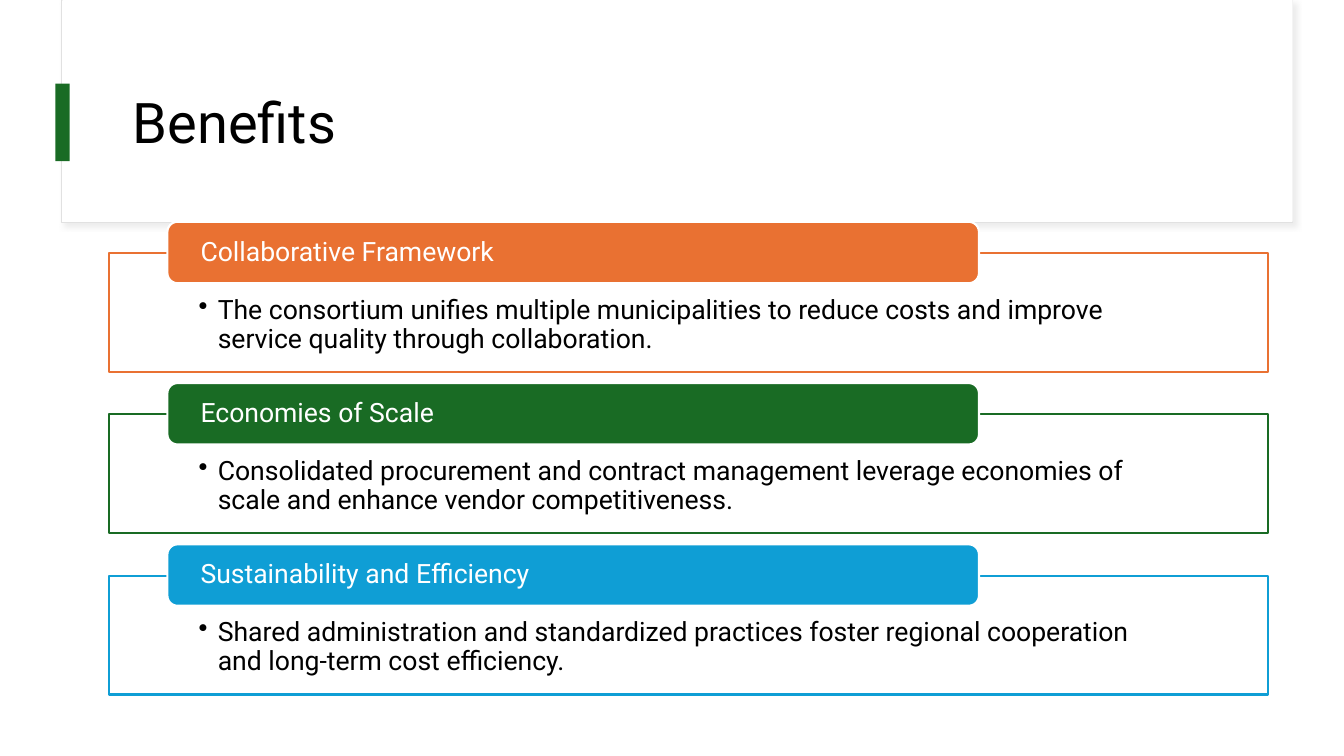
import pptx
import pptx.util
import pptx.dml.color
import pptx.enum.shapes
import pptx.enum.text
import pptx.oxml
import pptx.oxml.ns

Inches, Pt = pptx.util.Inches, pptx.util.Pt
SHAPE = pptx.enum.shapes.MSO_SHAPE
ANCHOR = pptx.enum.text.MSO_ANCHOR
ALIGN = pptx.enum.text.PP_ALIGN

# Content
TITLE = "Benefits"
BENEFITS = [
    ("Collaborative Framework", "orange",
     "The consortium unifies multiple municipalities to reduce costs "
     "and improve service quality through collaboration."),
    ("Economies of Scale", "green",
     "Consolidated procurement and contract management leverage "
     "economies of scale and enhance vendor competitiveness."),
    ("Sustainability and Efficiency", "blue",
     "Shared administration and standardized practices foster regional "
     "cooperation and long-term cost efficiency."),
]
COLORS = {"white": "FFFFFF", "black": "000000", "border": "E1E1E1",
          "shadow": "D9D9D9", "orange": "E97132", "green": "196B24",
          "blue": "0F9ED5"}
FONT = "Roboto"

# Layout
TOP, PITCH = 2.2, 1.6
BODY_DROP = 0.31  # body frame starts halfway down its heading


def rgb(name):
    return pptx.dml.color.RGBColor.from_string(COLORS[name])


def xml(text):
    ns = pptx.oxml.ns.nsdecls("a")
    return pptx.oxml.parse_xml(text.replace("NS", ns, 1))


def add_box(slide, kind, box, fill, line=None, width=1.5):
    sp = slide.shapes.add_shape(kind, *map(Inches, box))
    sp.shadow.inherit = False
    sp.fill.solid()
    sp.fill.fore_color.rgb = rgb(fill)
    if line:
        sp.line.color.rgb = rgb(line)
        sp.line.width = Pt(width)
    else:
        sp.line.fill.background()
    return sp


def set_text(sp, text, size, color, insets, anchor, bullet=False):
    tf = sp.text_frame
    left, top, right, bottom = map(Inches, insets)
    frame = {"word_wrap": True, "vertical_anchor": anchor,
             "margin_left": left, "margin_top": top,
             "margin_right": right, "margin_bottom": bottom}
    for name, value in frame.items():
        setattr(tf, name, value)
    p = tf.paragraphs[0]
    p.alignment = ALIGN.LEFT
    p.line_spacing = 0.9
    if bullet:
        pPr = p._p.get_or_add_pPr()
        indent = Inches(0.19)
        pPr.set("marL", str(indent))
        pPr.set("indent", str(-indent))
        pPr.append(xml('<a:buChar NS char="•"/>'))
    r = p.add_run()
    r.text = text
    for name, value in {"name": FONT, "size": Pt(size)}.items():
        setattr(r.font, name, value)
    r.font.color.rgb = rgb(color)


prs = pptx.Presentation()
prs.slide_width, prs.slide_height = Inches(13.33), Inches(7.5)
slide = prs.slides.add_slide(prs.slide_layouts[6])

# Title panel with soft shadow
panel = add_box(slide, SHAPE.RECTANGLE, (0.61, 0, 12.21, 2.21),
                "white", "border", 0.75)
effects = panel._element.spPr.find(pptx.oxml.ns.qn("a:effectLst"))
effects.append(xml(
    f'<a:outerShdw NS blurRad="{Pt(4)}" dist="{Pt(3)}" dir="2700000" '
    f'algn="tl" rotWithShape="0"><a:srgbClr val="{COLORS["shadow"]}">'
    '<a:alpha val="50000"/></a:srgbClr></a:outerShdw>'))
add_box(slide, SHAPE.RECTANGLE, (0.62, 0, 12.2, 2.2), "white")

# Title and accent bar
title = slide.shapes.add_textbox(*map(Inches, (1.22, 0.6, 11.12, 1.29)))
set_text(title, TITLE, 40, "black", (0.1, 0.05, 0.1, 0.05), ANCHOR.MIDDLE)
add_box(slide, SHAPE.RECTANGLE, (0.55, 0.83, 0.14, 0.77), "green")

# Benefit frames, each with a heading over its top edge
for i, (heading, color, detail) in enumerate(BENEFITS):
    top = TOP + i * PITCH
    body = add_box(slide, SHAPE.RECTANGLE,
                   (1.08, top + BODY_DROP, 11.5, 1.18), "white", color)
    body.fill._xPr.find(".//" + pptx.oxml.ns.qn("a:srgbClr")).append(
        xml('<a:alpha NS val="90000"/>'))
    set_text(body, detail, 19, "black", (0.89, 0.43, 0.89, 0.15),
             ANCHOR.TOP, bullet=True)
    tab = add_box(slide, SHAPE.ROUNDED_RECTANGLE,
                  (1.66, top, 8.05, 0.61), color, "white")
    set_text(tab, heading, 19, "white", (0.3, 0, 0.3, 0), ANCHOR.MIDDLE)

prs.save("out.pptx")
